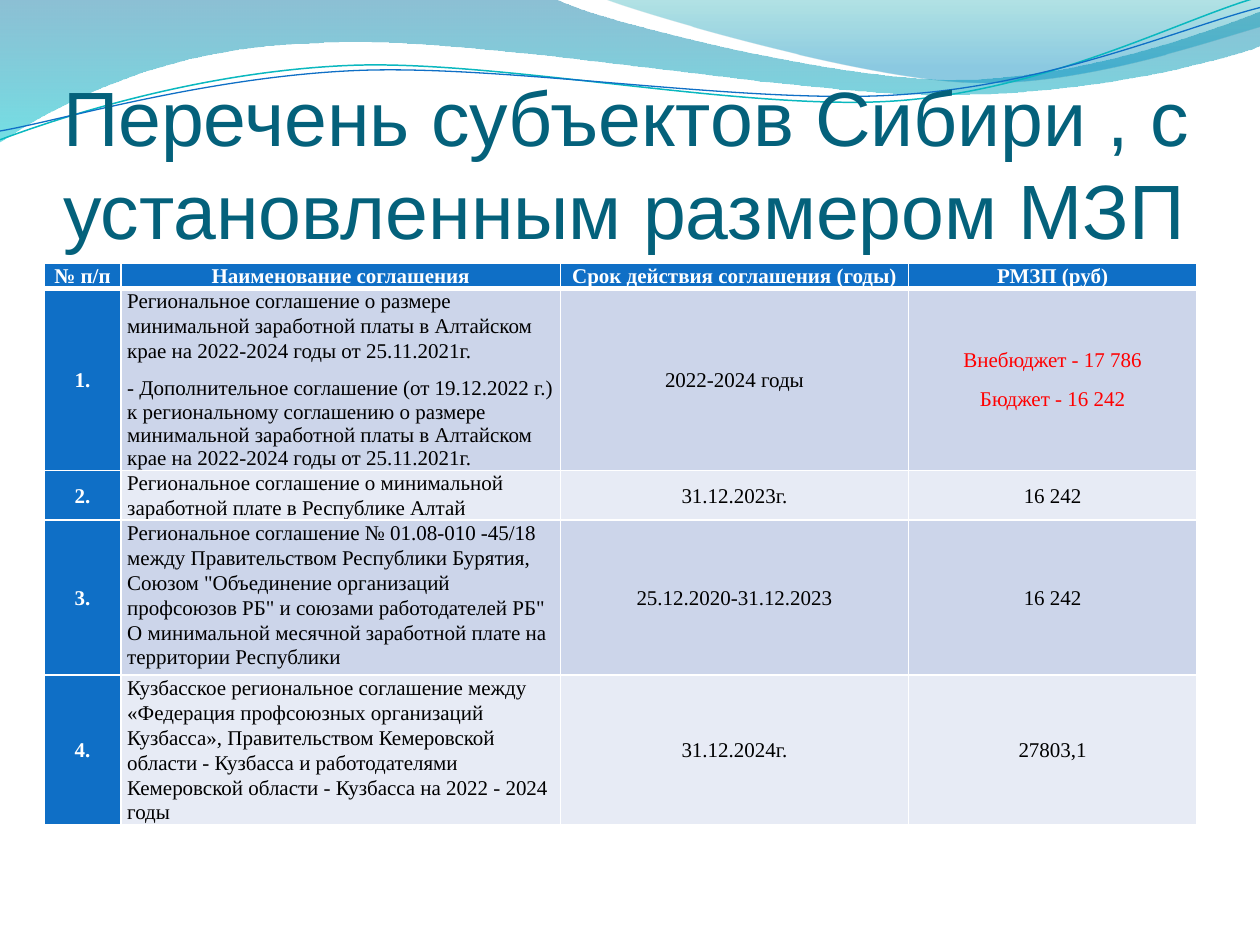
from dataclasses import dataclass
from typing import Optional

from lxml.etree import SubElement
from pptx import Presentation
from pptx.dml.color import RGBColor
from pptx.enum.text import MSO_ANCHOR, MSO_AUTO_SIZE, PP_ALIGN
from pptx.oxml.ns import qn
from pptx.util import Inches, Pt

COLORS = {
    "white": "FFFFFF", "black": "000000", "red": "FF0000",
    "title": "04617B", "header": "0F6FC6", "odd": "CCD5EA", "even": "E7EBF5",
    "deep": "0074A1", "cyan": "00C6CF", "teal": "00A1A9", "blue": "008BBF",
    "aqua line": "0AB8BF", "blue line": "0F6FC6",
}
GRID = 100  # outline units per inch


@dataclass
class Stop:
    position: float
    color: str
    opacity: int


@dataclass
class Wave:
    """A start point, then steps: 2 numbers draw a line, 6 a Bezier curve."""
    start: tuple
    steps: list
    stops: Optional[list] = None
    line: Optional[str] = None
    width: float = 0


@dataclass
class Agreement:
    names: list
    term: str
    wages: list
    wage_color: str = "black"


WAVES = [
    Wave((0, 0), [
        (4.4, -0.01), (4.76, 0.17, 6.64, 0.63, 7.58, 0.63),
        (8.53, 0.63, 9.58, 0.26, 10, 0.09), (10.01, 0.36),
        (9.83, 0.44, 8.7, 0.76, 7.46, 0.75), (6.22, 0.75, 3.82, 0.28, 2.57, 0.34),
        (1.29, 0.36, 0.46, 0.83, -0.01, 1.13)],
        stops=[Stop(0, "deep", 45), Stop(1, "cyan", 55)]),
    Wave((4.79, -0.01), [
        (5.09, 0.11, 6.82, 0.62, 7.69, 0.65),
        (8.56, 0.69, 9.61, 0.32, 10, 0.21), (10, 0)],
        stops=[Stop(0, "teal", 30), Stop(0.8, "blue", 45)]),
    Wave((0, 1.11), [
        (0.48, 0.93, 1.58, 0.57, 2.77, 0.52), (3.95, 0.47, 5.93, 0.89, 7.13, 0.8),
        (8.33, 0.71, 9.38, 0.15, 9.98, -0.02)], line="aqua line", width=0.85),
    Wave((0, 1.04), [
        (0.47, 0.96, 1.64, 0.61, 2.83, 0.56), (4.03, 0.51, 5.97, 0.84, 7.17, 0.75),
        (8.36, 0.67, 9.41, 0.21, 10, 0.06)], line="blue line", width=0.75),
]

TITLE = "Перечень субъектов Сибири , с установленным размером МЗП"
HEADERS = ["№ п/п", "Наименование соглашения", "Срок действия соглашения (годы)", "РМЗП (руб)"]
AGREEMENTS = [
    Agreement([
        "Региональное соглашение о размере минимальной заработной платы в Алтайском крае "
        "на 2022-2024 годы от 25.11.2021г.",
        "- Дополнительное соглашение (от 19.12.2022 г.) к региональному соглашению о размере "
        "минимальной заработной платы в Алтайском крае на 2022-2024 годы от 25.11.2021г."],
        "2022-2024 годы", ["Внебюджет - 17 786", "Бюджет - 16 242"], "red"),
    Agreement(["Региональное соглашение о минимальной заработной плате в Республике Алтай"],
              "31.12.2023г.", ["16 242"]),
    Agreement([
        "Региональное соглашение № 01.08-010 -45/18 между Правительством Республики Бурятия, "
        "Союзом \"Объединение организаций профсоюзов РБ\" и союзами работодателей РБ\" "
        "О минимальной месячной заработной плате на территории Республики"],
        "25.12.2020-31.12.2023", ["16 242"]),
    Agreement([
        "Кузбасское региональное соглашение между «Федерация профсоюзных организаций Кузбасса», "
        "Правительством Кемеровской области - Кузбасса и работодателями Кемеровской области - "
        "Кузбасса на 2022 - 2024 годы"],
        "31.12.2024г.", ["27803,1"]),
]
COLUMN_WIDTHS = [0.61, 3.49, 2.76, 2.29]
ROW_HEIGHTS = [0.14, 1.12, 0.3, 1.23, 0.9]


def rgb(name: str) -> RGBColor:
    return RGBColor.from_string(COLORS[name])


def set_all(target, values: dict) -> None:
    for name, value in values.items():
        setattr(target, name, value)


def bend_segments(shape, wave: Wave, corners: list) -> None:
    """Turn the straight segments of the curved steps into Bezier curves."""
    left, top = (min(values) for values in zip(*corners))
    segments = list(shape._element.iter(qn("a:lnTo")))
    for segment, step in zip(segments, wave.steps):
        if len(step) == 2:
            continue
        curve = SubElement(segment.getparent(), qn("a:cubicBezTo"))
        for x, y in zip(step[::2], step[1::2]):
            SubElement(curve, qn("a:pt"), x=str(round(x * GRID) - left),
                       y=str(round(y * GRID) - top))
        segment.getparent().replace(segment, curve)


def draw_wave(slide, wave: Wave) -> None:
    corners = [(round(x * GRID), round(y * GRID))
               for x, y in [wave.start] + [step[-2:] for step in wave.steps]]
    builder = slide.shapes.build_freeform(*corners[0], scale=Inches(1) / GRID)
    builder.add_line_segments(corners[1:], close=False)
    shape = builder.convert_to_shape()
    bend_segments(shape, wave, corners)
    shape.shadow.inherit = False
    if wave.stops is None:
        shape.fill.background()
        shape.line.color.rgb = rgb(wave.line)
        shape.line.width = Pt(wave.width)
        return
    outline = next(shape._element.iter(qn("a:path")))
    SubElement(outline, qn("a:close"))
    shape.line.fill.background()
    shape.fill.gradient()
    shape.fill.gradient_angle = 270
    for target, stop in zip(shape.fill.gradient_stops, wave.stops):
        target.position = stop.position
        target.color.rgb = rgb(stop.color)
    for color, stop in zip(shape.fill._xPr.iter(qn("a:srgbClr")), wave.stops):
        SubElement(color, qn("a:alpha"), val=str(stop.opacity * 1000))


def set_borders(cell, top: float = 1, bottom: float = 1) -> None:
    properties = cell._tc.get_or_add_tcPr()
    widths = {"a:lnL": 1, "a:lnR": 1, "a:lnT": top, "a:lnB": bottom}
    for index, (tag, width) in enumerate(widths.items()):
        line = SubElement(properties, qn(tag), w=str(Pt(width)))
        SubElement(SubElement(line, qn("a:solidFill")), qn("a:srgbClr"), val=COLORS["white"])
        properties.insert(index, line)


def fill_cell(cell, texts: list, fill: str, color: str = "black", bold: bool = False,
              align=PP_ALIGN.CENTER, anchor=MSO_ANCHOR.MIDDLE) -> None:
    set_all(cell, {"margin_left": Inches(0.05), "margin_right": Inches(0.05),
                   "margin_top": 0, "margin_bottom": 0, "vertical_anchor": anchor})
    cell.fill.solid()
    cell.fill.fore_color.rgb = rgb(fill)
    cell.text = "\n".join(texts)
    for para in cell.text_frame.paragraphs:
        set_all(para, {"alignment": align, "line_spacing": 1.07, "space_after": Pt(8)})
        set_all(para.runs[0].font, {"name": "Times New Roman", "size": Pt(12), "bold": bold})
        para.runs[0].font.color.rgb = rgb(color)


def draw_title(slide) -> None:
    title = slide.shapes.title
    set_all(title, {"left": Inches(0.5), "top": Inches(0.77),
                    "width": Inches(9), "height": Inches(1.25)})
    frame = title.text_frame
    frame.text = TITLE
    set_all(frame, {"margin_left": 0, "margin_right": 0, "margin_top": Inches(0.05),
                    "margin_bottom": 0, "word_wrap": True,
                    "auto_size": MSO_AUTO_SIZE.NONE, "vertical_anchor": MSO_ANCHOR.BOTTOM})
    para = frame.paragraphs[0]
    para.alignment = PP_ALIGN.LEFT
    set_all(para.runs[0].font, {"name": "Arial", "size": Pt(44)})
    para.runs[0].font.color.rgb = rgb("title")


def draw_table(slide) -> None:
    table = slide.shapes.add_table(
        len(ROW_HEIGHTS), len(COLUMN_WIDTHS), Inches(0.35), Inches(2.09),
        Inches(sum(COLUMN_WIDTHS)), Inches(sum(ROW_HEIGHTS))).table
    set_all(table, {"first_row": False, "horz_banding": False})
    for column, width in zip(table.columns, COLUMN_WIDTHS):
        column.width = Inches(width)
    for row, height in zip(table.rows, ROW_HEIGHTS):
        row.height = Inches(height)
    # Header row
    for column, header in enumerate(HEADERS):
        fill_cell(table.cell(0, column), [header], "header", "white", True, anchor=MSO_ANCHOR.TOP)
    # One row per agreement, in alternating bands
    for number, item in enumerate(AGREEMENTS, 1):
        band = "odd" if number % 2 else "even"
        number_cell, name_cell, term_cell, wage_cell = table.rows[number].cells
        fill_cell(number_cell, [f"{number}."], "header", "white", True)
        fill_cell(name_cell, item.names, band, align=PP_ALIGN.LEFT, anchor=MSO_ANCHOR.TOP)
        for extra in name_cell.text_frame.paragraphs[1:]:
            set_all(extra, {"line_spacing": None, "space_after": None})
        fill_cell(term_cell, [item.term], band)
        fill_cell(wage_cell, item.wages, band, item.wage_color)
    for index, row in enumerate(table.rows):
        for cell in row.cells:
            set_borders(cell, top=3 if index == 1 else 1, bottom=3 if index == 0 else 1)


def main() -> None:
    deck = Presentation()
    set_all(deck, {"slide_width": Inches(10), "slide_height": Inches(7.5)})
    slide = deck.slides.add_slide(deck.slide_layouts[5])
    # Waves across the top, moved behind the title
    for wave in WAVES:
        draw_wave(slide, wave)
    slide.shapes._spTree.append(slide.shapes.title._element)
    draw_title(slide)
    draw_table(slide)
    deck.save("out.pptx")


if __name__ == "__main__":
    main()
